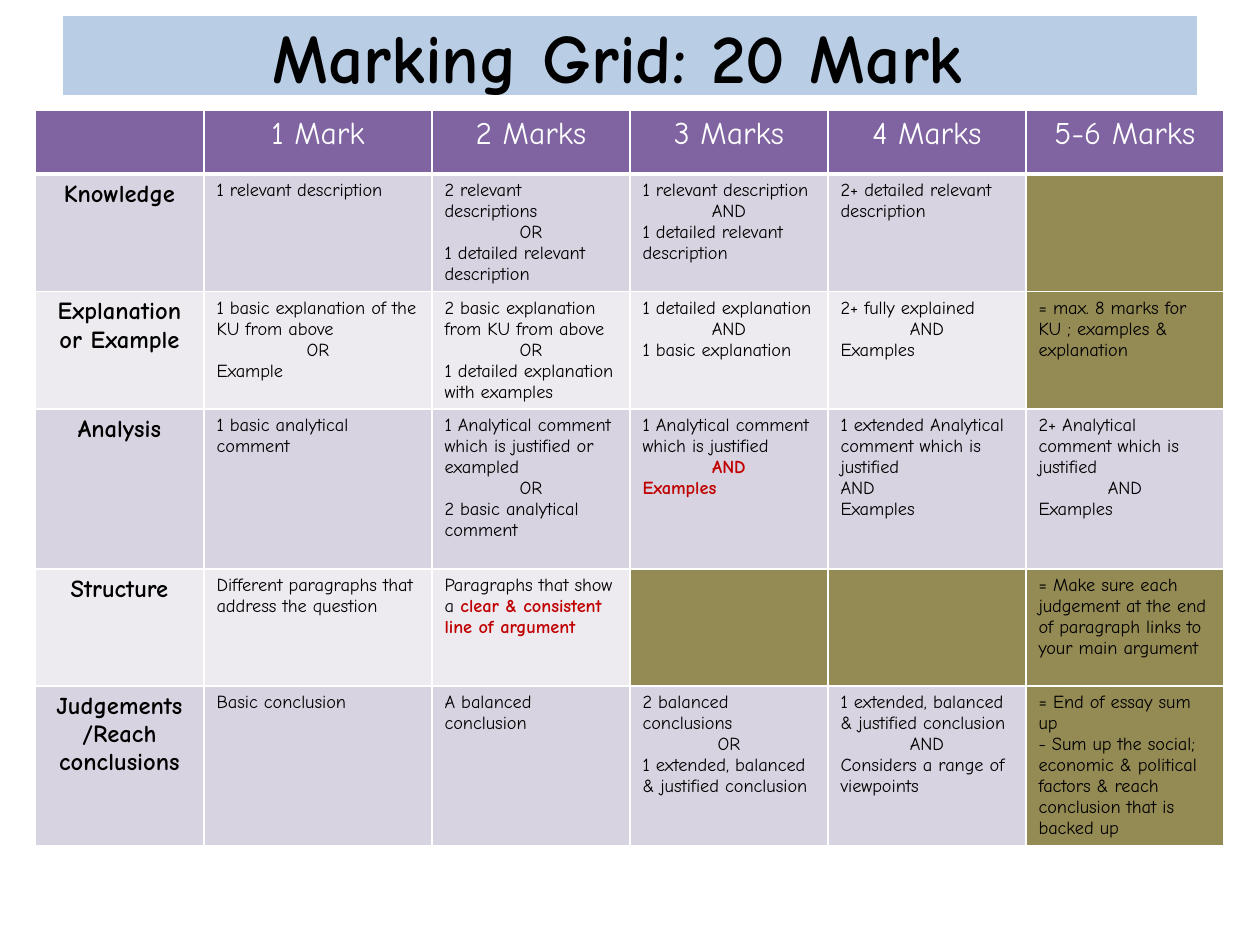
from lxml import etree
from pptx import Presentation
from pptx.dml.color import RGBColor
from pptx.enum.text import MSO_ANCHOR, MSO_AUTO_SIZE, PP_ALIGN
from pptx.oxml.ns import qn
from pptx.util import Emu, Pt

CENTER = PP_ALIGN.CENTER
LEFT = PP_ALIGN.LEFT
MIDDLE = MSO_ANCHOR.MIDDLE
NO_AUTOFIT = MSO_AUTO_SIZE.NONE

PX = 914400 / 126
FONT = "Comic Neue"
COLORS = {
    "title": "B9CDE5",
    "header": "8064A2",
    "odd": "D8D3E0",
    "even": "EDEAF0",
    "blocked": "948A54",
    "text": "000000",
    "white": "FFFFFF",
    "red": "C00000",
}

CENTER_MARK = ">"
RED_MARK = "*"
COLUMN_WIDTHS = [169, 228, 198, 198, 198, 198]
ROW_HEIGHTS = [64, 117, 117, 160, 117, 160]
BLOCKED = {(1, 5), (2, 5), (4, 3), (4, 4), (4, 5), (5, 5)}
GRID = [
    ["", "1 Mark", "2 Marks", "3 Marks", "4 Marks", "5-6 Marks"],
    [
        "Knowledge",
        "1 relevant description",
        "2 relevant descriptions\n>OR\n1 detailed relevant description",
        "1 relevant description\n>AND\n1 detailed relevant description",
        "2+ detailed relevant description",
        "",
    ],
    [
        "Explanation or Example",
        "1 basic explanation of the KU from above\n>OR\nExample",
        "2 basic explanation from KU from above\n>OR\n1 detailed explanation with examples",
        "1 detailed explanation\n>AND\n1 basic explanation",
        "2+ fully explained\n>AND\nExamples",
        "= max. 8 marks for KU ; examples & explanation",
    ],
    [
        "Analysis",
        "1 basic analytical comment",
        "1 Analytical comment which is justified or exampled\n>OR\n2 basic analytical comment",
        "1 Analytical comment which is justified\n>*AND\n*Examples",
        "1 extended Analytical comment which is justified\nAND\nExamples",
        "2+ Analytical comment which is justified\n>AND\nExamples",
    ],
    [
        "Structure",
        "Different paragraphs that address the question",
        "Paragraphs that show a* clear & consistent line of argument",
        "",
        "",
        "= Make sure each judgement at the end of paragraph links to your main argument",
    ],
    [
        "Judgements /Reach conclusions",
        "Basic conclusion",
        "A balanced conclusion",
        "2 balanced conclusions\n>OR\n1 extended, balanced & justified conclusion",
        "1 extended, balanced & justified conclusion\n>AND\nConsiders a range of viewpoints",
        "= End of essay sum up\n- Sum up the social; economic & political factors "
        "& reach conclusion that is backed up",
    ],
]


def px(length):
    return Emu(round(length * PX))


def set_fill(target, color):
    target.fill.solid()
    target.fill.fore_color.rgb = RGBColor.from_string(COLORS[color])


def add_run(paragraph, text, size, color, bold):
    run = paragraph.add_run()
    run.text = text
    run.font.name = FONT
    run.font.size = Pt(size)
    run.font.bold = bold
    run.font.color.rgb = RGBColor.from_string(COLORS[color])


def write_text(text_frame, text, size=10.5, color="text", bold=False, align=LEFT):
    for index, line in enumerate(text.split("\n")):
        paragraph = text_frame.add_paragraph() if index else text_frame.paragraphs[0]
        centered = line.startswith(CENTER_MARK)
        paragraph.alignment = CENTER if centered else align
        plain, _, red = line.removeprefix(CENTER_MARK).partition(RED_MARK)
        if plain:
            add_run(paragraph, plain, size, color, bold)
        if red:
            add_run(paragraph, red, size, "red", True)


def set_borders(cell, bottom):
    properties = cell._tc.get_or_add_tcPr()
    for side, width in (("L", 1), ("R", 1), ("T", 1), ("B", bottom)):
        line = etree.SubElement(properties, qn(f"a:ln{side}"), w=str(Pt(width)))
        fill = etree.SubElement(line, qn("a:solidFill"))
        etree.SubElement(fill, qn("a:srgbClr"), val=COLORS["white"])


def place_title(slide, left, top, width, height):
    title = slide.shapes.title
    title.left, title.top = px(left), px(top)
    title.width, title.height = px(width), px(height)
    set_fill(title, "title")
    text_frame = title.text_frame
    text_frame.auto_size = NO_AUTOFIT
    text_frame.word_wrap = True
    text_frame.vertical_anchor = MIDDLE
    write_text(text_frame, "Marking Grid: 20 Mark ", size=39.6, bold=True, align=CENTER)


def cell_fill(row, column):
    if row == 0:
        return "header"
    if (row, column) in BLOCKED:
        return "blocked"
    return "odd" if row % 2 else "even"


def text_format(row, column):
    if row == 0:
        return {"size": 18, "color": "white", "align": CENTER}
    if column == 0:
        return {"size": 14, "bold": True, "align": CENTER}
    return {}


def place_grid(slide, left, top):
    frame = slide.shapes.add_table(
        len(ROW_HEIGHTS), len(COLUMN_WIDTHS), px(left), px(top),
        px(sum(COLUMN_WIDTHS)), px(sum(ROW_HEIGHTS)),
    )
    table = frame.table
    for column, width in zip(table.columns, COLUMN_WIDTHS):
        column.width = px(width)
    for row, height in zip(table.rows, ROW_HEIGHTS):
        row.height = px(height)
    for row, texts in enumerate(GRID):
        for column, text in enumerate(texts):
            cell = table.cell(row, column)
            set_borders(cell, bottom=1 if row else 3)
            set_fill(cell, cell_fill(row, column))
            write_text(cell.text_frame, text, **text_format(row, column))


def main():
    presentation = Presentation()
    presentation.slide_width, presentation.slide_height = px(1260), px(945)
    slide = presentation.slides.add_slide(presentation.slide_layouts[5])
    place_title(slide, 63, 16, 1134, 79)
    place_grid(slide, 35, 110)
    presentation.save("out.pptx")


if __name__ == "__main__":
    main()
